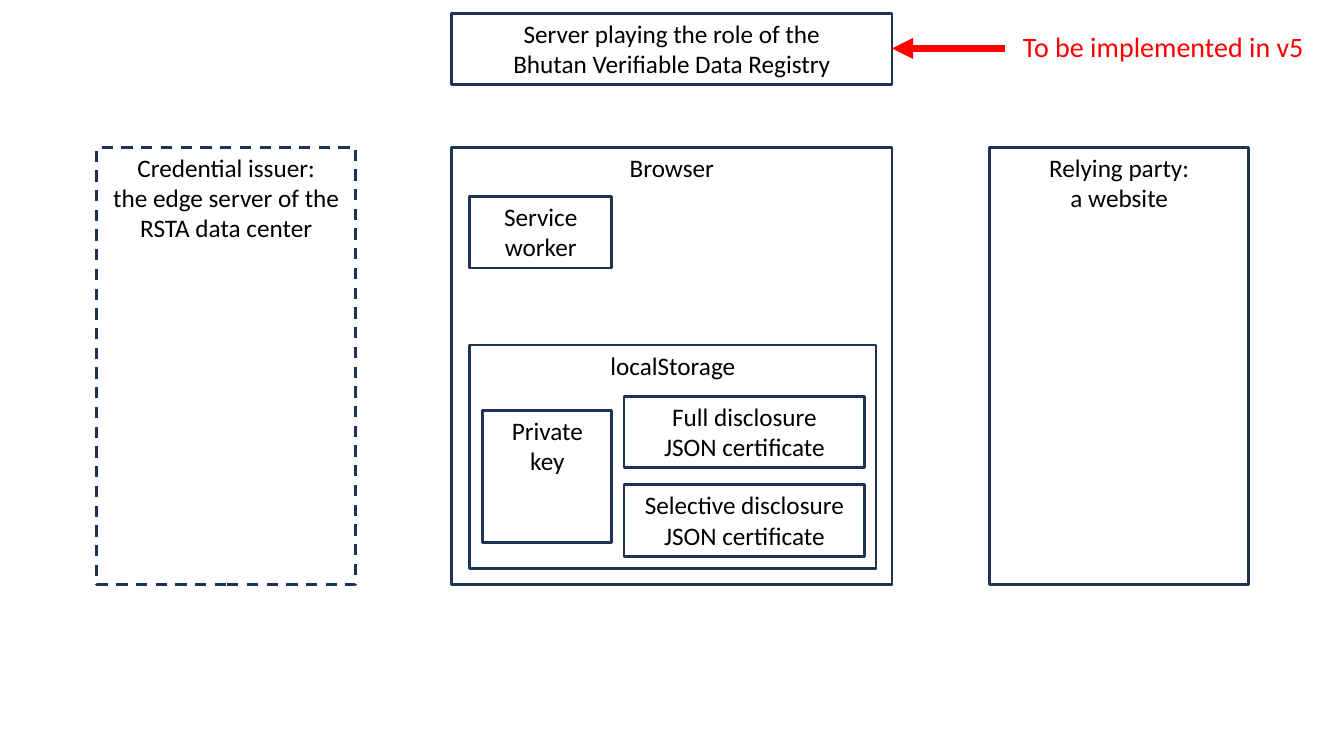
"""Build the slide showing credential issuer, browser, relying party and registry."""
from dataclasses import dataclass

from lxml import etree
from pptx import Presentation
from pptx.dml.color import RGBColor
from pptx.enum.dml import MSO_LINE
from pptx.enum.shapes import MSO_CONNECTOR
from pptx.enum.text import MSO_ANCHOR, PP_ALIGN
from pptx.oxml.ns import qn
from pptx.slide import Slide
from pptx.util import Pt

STRAIGHT = MSO_CONNECTOR.STRAIGHT
DASH = MSO_LINE.DASH
TOP = MSO_ANCHOR.TOP
CENTER = PP_ALIGN.CENTER
LEFT = PP_ALIGN.LEFT

NAVY = RGBColor(0x1E, 0x32, 0x56)
BLACK = RGBColor(0, 0, 0)
RED = RGBColor(0xFF, 0, 0)
WHITE = RGBColor(0xFF, 0xFF, 0xFF)

FONT = "Calibri"
PARTY_TOP, PARTY_WIDTH, PARTY_HEIGHT = 105.1, 185, 312.5
BROWSER_LEFT, BROWSER_WIDTH = 322.6, 314.6
BROWSER_RIGHT = BROWSER_LEFT + BROWSER_WIDTH
CONTENT_LEFT = 335.5
CERTIFICATE_LEFT, CERTIFICATE_WIDTH = 445.7, 172.1
TWO_LINES = 51.1
REGISTRY_TOP = 9.4
ARROW_Y = 34.6


@dataclass(frozen=True)
class Box:
    """A labelled rectangle, with lengths in points."""

    left: float
    top: float
    width: float
    height: float
    lines: tuple[str, ...]
    dashed: bool = False


BOXES = (
    Box(BROWSER_LEFT, PARTY_TOP, BROWSER_WIDTH, PARTY_HEIGHT, ("Browser",)),
    Box(CONTENT_LEFT, 140.4, 101.5, TWO_LINES, ("Service", "worker")),
    Box(CONTENT_LEFT, 246.4, 290.2, 159.8, ("localStorage",)),
    Box(CERTIFICATE_LEFT, 283, CERTIFICATE_WIDTH, TWO_LINES,
        ("Full disclosure", "JSON certificate")),
    Box(CERTIFICATE_LEFT, 346.3, CERTIFICATE_WIDTH, TWO_LINES,
        ("Selective disclosure", "JSON certificate")),
    Box(344.9, 293, 92.2, 94.3, ("Private key",)),
    Box(707, PARTY_TOP, PARTY_WIDTH, PARTY_HEIGHT, ("Relying party:", "a website")),
    Box(69.1, PARTY_TOP, PARTY_WIDTH, PARTY_HEIGHT,
        ("Credential issuer:", "the edge server of the RSTA data center"), dashed=True),
    Box(BROWSER_LEFT, REGISTRY_TOP, BROWSER_WIDTH, TWO_LINES,
        ("Server playing the role of the", "Bhutan Verifiable Data Registry")),
)
NOTE = Box(723.6, 17.3, 229, 31.5, ("To be implemented in v5",))


def add_text(slide: Slide, box: Box, size: float, color: RGBColor, alignment: PP_ALIGN):
    """Add the text of a box and return its shape."""
    shape = slide.shapes.add_textbox(Pt(box.left), Pt(box.top), Pt(box.width), Pt(box.height))
    frame = shape.text_frame
    frame.word_wrap = True
    frame.vertical_anchor = TOP
    frame.text = "\n".join(box.lines)
    for paragraph in frame.paragraphs:
        paragraph.alignment = alignment
        paragraph.font.name = FONT
        paragraph.font.size = Pt(size)
        paragraph.font.color.rgb = color
    return shape


def add_box(slide: Slide, box: Box) -> None:
    """Add an outlined box."""
    shape = add_text(slide, box, 18, BLACK, CENTER)
    shape.line.color.rgb = NAVY
    shape.line.width = Pt(2)
    if box.dashed:
        shape.line.dash_style = DASH


def add_arrow(slide: Slide, start: float, end: float, y: float) -> None:
    """Add a horizontal red arrow."""
    arrow = slide.shapes.add_connector(STRAIGHT, Pt(start), Pt(y), Pt(end), Pt(y))
    arrow.line.color.rgb = RED
    arrow.line.width = Pt(5)
    properties = arrow._element.spPr
    etree.SubElement(properties.find(qn("a:ln")), qn("a:tailEnd"), type="triangle")
    etree.SubElement(properties, qn("a:effectLst"))


def main() -> None:
    """Draw and save the slide."""
    presentation = Presentation()
    presentation.slide_width = Pt(960)
    presentation.slide_height = Pt(540)
    slide = presentation.slides.add_slide(presentation.slide_layouts[6])
    for box in BOXES:
        add_box(slide, box)
    add_arrow(slide, 717.8, BROWSER_RIGHT, ARROW_Y)
    note = add_text(slide, NOTE, 20, RED, LEFT)
    note.fill.solid()
    note.fill.fore_color.rgb = WHITE
    presentation.save("out.pptx")


if __name__ == "__main__":
    main()
